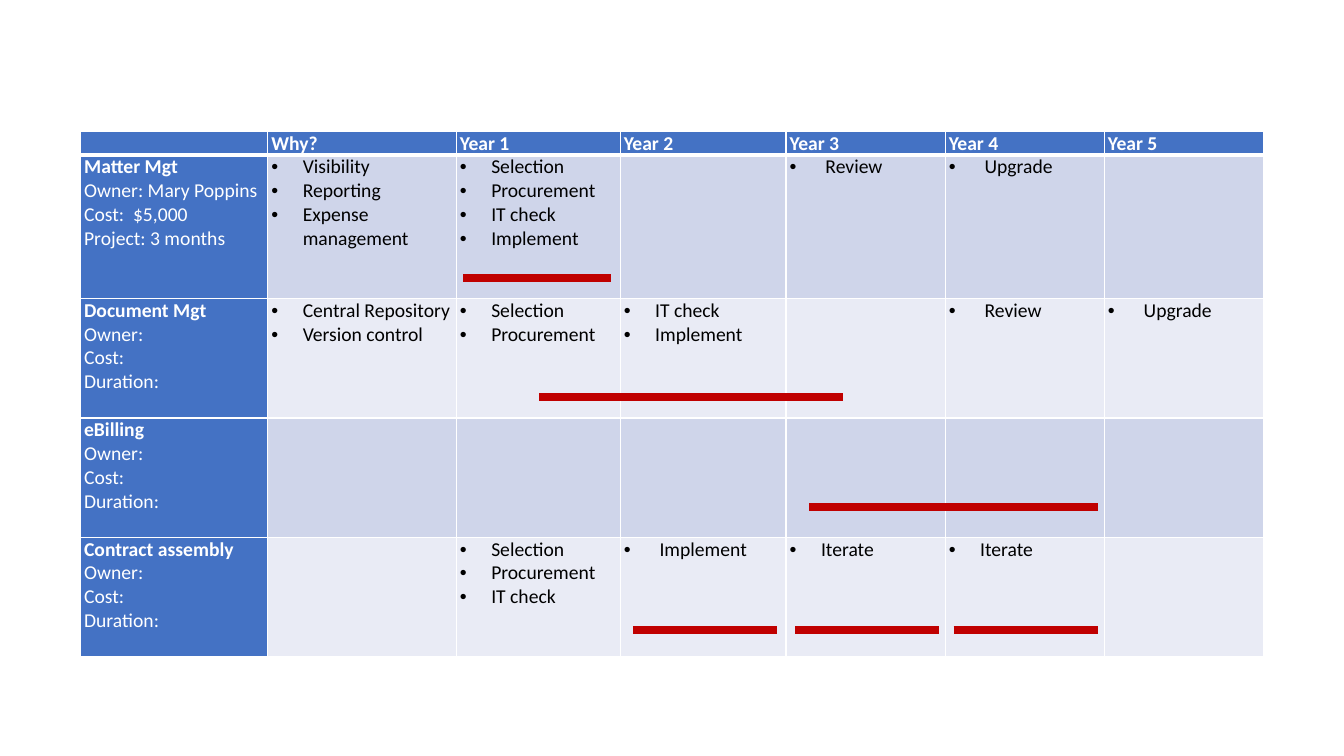
from collections import namedtuple

from lxml.etree import SubElement as Sub
from pptx import Presentation as Deck
from pptx.dml.color import RGBColor as Rgb
from pptx.enum.shapes import MSO_CONNECTOR as Link
from pptx.oxml.ns import qn
from pptx.util import Cm, Pt

Box = namedtuple("Box", "left top width height")
Theme = namedtuple("Theme", "head bands ink light bar font size thick")

THEME = Theme(
    head="4472C4", bands=("CFD5EA", "E9EBF5"), ink="000000", light="FFFFFF",
    bar="C00000", font="Calibri", size=14, thick=5.5,
)
GRID = Box(2.03, 3.31, 29.83, 13.24)
COLS = (4.72, 4.75, 4.13, 4.18, 4.01, 4.01, 4.01)
ROWS = (0.6, 3.61, 3.01, 3.01, 3.01)
INDENT = 0.79
PAD = dict(margin_left=Cm(0.09), margin_right=Cm(0.09), margin_top=0, margin_bottom=0)

HEADS = ["", "Why?"] + [f"Year {n}" for n in range(1, 6)]
TASKS = ["Owner:", "Cost:", "Duration:"]
PLAN = [
    (["Matter Mgt", "Owner: Mary Poppins", "Cost:  $5,000", "Project: 3 months"],
     ["Visibility", "Reporting", "Expense management"],
     ["Selection", "Procurement", "IT check", "Implement"],
     [], [" Review"], [" Upgrade"], []),
    (["Document Mgt", *TASKS],
     ["Central Repository", "Version control"],
     ["Selection", "Procurement"], ["IT check", "Implement"],
     [], [" Review"], [" Upgrade"]),
    (["eBilling", *TASKS], [], [], [], [], [], []),
    (["Contract assembly", *TASKS],
     [], ["Selection", "Procurement", "IT check"],
     [" Implement"], ["Iterate"], ["Iterate"], []),
]
BARS = [
    (9.65, 3.7, 3.73),
    (11.56, 6.7, 7.65),
    (18.37, 9.47, 7.26),
    (13.92, 12.57, 3.63),
    (18.01, 12.57, 3.63),
    (22, 12.57, 3.63),
]


def apply(item, values):
    """Set each attribute named in a dict of format values."""
    for name, value in values.items():
        setattr(item, name, value)


def edge(cell, row):
    """Draw the white borders of a cell, thicker below the header."""
    props = cell._tc.get_or_add_tcPr()
    thick = {(0, "lnB"): 3, (1, "lnT"): 3}
    for side in ("lnL", "lnR", "lnT", "lnB"):
        line = Sub(props, qn(f"a:{side}"), w=str(Pt(thick.get((row, side), 1))))
        Sub(Sub(line, qn("a:solidFill")), qn("a:srgbClr"), val=THEME.light)


def bullet(para):
    """Give a paragraph a hanging round bullet."""
    props = para._p.get_or_add_pPr()
    props.set("marL", str(Cm(INDENT)))
    props.set("indent", str(-Cm(INDENT)))
    Sub(props, qn("a:buFont"), typeface="Arial")
    Sub(props, qn("a:buChar"), char="•")


def write(cell, lines, color, bold, dots):
    """Fill a cell with lines, of which the first may be bold."""
    frame = cell.text_frame
    if not lines:
        Sub(frame.paragraphs[0]._p, qn("a:endParaRPr"), sz=str(THEME.size * 100))
    for n, line in enumerate(lines):
        para = frame.add_paragraph() if n else frame.paragraphs[0]
        if dots:
            bullet(para)
        run = para.add_run()
        run.text = line
        apply(run.font, dict(name=THEME.font, size=Pt(THEME.size), bold=bold and n == 0))
        run.font.color.rgb = Rgb.from_string(color)


def add_plan(slide, box):
    """Place the table of projects by year in the box."""
    table = slide.shapes.add_table(len(ROWS), len(COLS), *map(Cm, box)).table
    for col, width in zip(table.columns, COLS):
        col.width = Cm(width)
    for row, height in zip(table.rows, ROWS):
        row.height = Cm(height)
    cells = [[[head] if head else [] for head in HEADS], *PLAN]
    for r, row in enumerate(cells):
        for c, lines in enumerate(row):
            cell = table.cell(r, c)
            title = r == 0 or c == 0
            apply(cell, PAD)
            edge(cell, r)
            cell.fill.solid()
            shade = THEME.head if title else THEME.bands[(r - 1) % 2]
            cell.fill.fore_color.rgb = Rgb.from_string(shade)
            write(cell, lines, THEME.light if title else THEME.ink, title, not title)


def add_bars(slide, box):
    """Place the time bars over the table, measured from its corner."""
    for x, y, width in BARS:
        left, top = box.left + x, box.top + y
        bar = slide.shapes.add_connector(
            Link.STRAIGHT, Cm(left), Cm(top), Cm(left + width), Cm(top))
        bar.line.width = Pt(THEME.thick)
        bar.line.color.rgb = Rgb.from_string(THEME.bar)
        Sub(bar._element.spPr, qn("a:effectLst"))


def main():
    """Build the roadmap slide and save it."""
    deck = Deck()
    apply(deck, dict(slide_width=Cm(33.87), slide_height=Cm(19.05)))
    slide = deck.slides.add_slide(deck.slide_layouts[6])
    add_plan(slide, GRID)
    add_bars(slide, GRID)
    deck.save("out.pptx")


if __name__ == "__main__":
    main()
